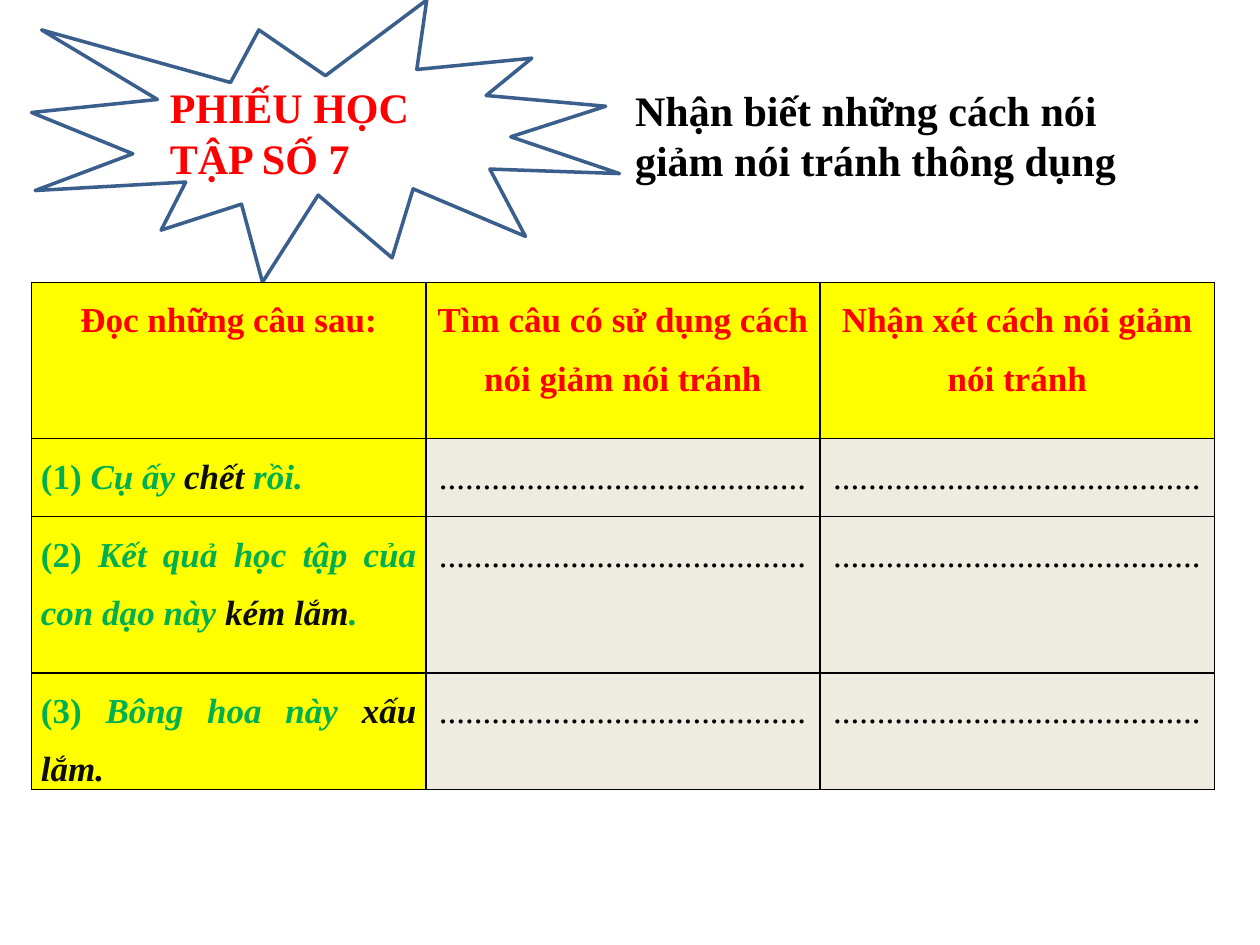
from lxml.etree import SubElement
from pptx import Presentation
from pptx.dml.color import RGBColor
from pptx.enum.shapes import MSO_SHAPE
from pptx.enum.text import MSO_ANCHOR, MSO_AUTO_SIZE, PP_ALIGN
from pptx.oxml.ns import qn
from pptx.util import Pt

WHITE = RGBColor(0xFF, 0xFF, 0xFF)
BLACK = RGBColor(0, 0, 0)
INK = RGBColor(0x0D, 0x0D, 0x0D)
RED = RGBColor(0xFF, 0, 0)
GREEN = RGBColor(0, 0xB0, 0x50)
BLUE = RGBColor(0x3A, 0x5F, 0x8C)
YELLOW = RGBColor(0xFF, 0xFF, 0)
CREAM = RGBColor(0xEE, 0xEC, 0xE1)

DOTS = "." * 42
HEADS = ["Đọc những câu sau:",
         "Tìm câu có sử dụng cách nói giảm nói tránh",
         "Nhận xét cách nói giảm nói tránh"]
# Each sentence: number, opening, stressed words, ending
LINES = [("(1) ", "Cụ ấy ", "chết", " rồi."),
         ("(2) ", "Kết quả học tập của con dạo này ", "kém lắm", "."),
         ("(3) ", "Bông hoa này ", "xấu lắm. ", "")]
ROWS = [89.3, 44.6, 89.3, 44.6]


class Sheet:
    face = "Times New Roman"

    def __init__(self, slide):
        self.slide = slide

    def style(self, para, size, color, bold=True, align=PP_ALIGN.LEFT):
        font = para.font
        font.name, font.size, font.bold = self.face, Pt(size), bold
        font.color.rgb = color
        para.alignment = align

    def title(self, text, box):
        shape = self.slide.shapes.title
        shape.left, shape.top, shape.width, shape.height = map(Pt, box)
        frame = shape.text_frame
        frame.text = text
        frame.word_wrap = True
        frame.auto_size = MSO_AUTO_SIZE.NONE
        frame.vertical_anchor = MSO_ANCHOR.TOP
        self.style(frame.paragraphs[0], 24, BLACK)

    def burst(self, text, box):
        shape = self.slide.shapes.add_shape(
            MSO_SHAPE.EXPLOSION1, *map(Pt, box))
        shape.shadow.inherit = False
        shape.fill.solid()
        shape.fill.fore_color.rgb = WHITE
        shape.line.color.rgb = BLUE
        shape.line.width = Pt(2)
        frame = shape.text_frame
        frame.text = text
        frame.word_wrap = True
        frame.vertical_anchor = MSO_ANCHOR.MIDDLE
        self.style(frame.paragraphs[0], 24, RED)

    def grid(self, box, rows, cols):
        table = self.slide.shapes.add_table(
            len(rows), cols, *map(Pt, box)).table
        for row, high in zip(table.rows, rows):
            row.height = Pt(high)
        for col in table.columns:
            col.width = Pt(box[2] / cols)
        return table

    def cell(self, cell, parts, fill, color, bold=True,
             align=PP_ALIGN.CENTER):
        """Fill a cell; parts are (text, color, italic)."""
        cell.margin_left = cell.margin_right = Pt(5.4)
        cell.margin_top = cell.margin_bottom = 0
        para = cell.text_frame.paragraphs[0]
        para.line_spacing = 1.5
        self.style(para, 20, color, bold, align)
        for text, tint, slant in parts:
            run = para.add_run()
            run.text = text
            run.font.italic = slant
            if tint != color:
                run.font.color.rgb = tint
        # Borders come before the fill in the cell's XML
        props = cell._tc.get_or_add_tcPr()
        for side in ("lnL", "lnR", "lnT", "lnB"):
            line = SubElement(props, qn("a:" + side), w=str(Pt(1)))
            solid = SubElement(line, qn("a:solidFill"))
            SubElement(solid, qn("a:srgbClr"), val=str(BLACK))
        cell.fill.solid()
        cell.fill.fore_color.rgb = fill


def main():
    deck = Presentation()
    deck.slide_width, deck.slide_height = Pt(720), Pt(540)
    sheet = Sheet(deck.slides.add_slide(deck.slide_layouts[5]))

    # Heading
    sheet.burst("PHIẾU HỌC TẬP SỐ 7", (18, 0, 336, 161.3))
    sheet.title("Nhận biết những cách nói giảm nói tránh thông dụng",
                (355.7, 44.6, 323.3, 65.5))

    # Worksheet table
    table = sheet.grid((18, 161.3, 676, sum(ROWS)), ROWS, len(HEADS))
    for col, head in enumerate(HEADS):
        sheet.cell(table.cell(0, col), [(head, RED, False)], YELLOW, RED)
    for row, (mark, start, key, end) in enumerate(LINES, 1):
        parts = [(mark, GREEN, False), (start, GREEN, True),
                 (key, INK, True)]
        if end:
            parts.append((end, GREEN, True))
        sheet.cell(table.cell(row, 0), parts, YELLOW, GREEN,
                   align=PP_ALIGN.JUSTIFY)
        for col in (1, 2):
            sheet.cell(table.cell(row, col), [(DOTS, BLACK, False)],
                       CREAM, BLACK, bold=False)

    deck.save("out.pptx")


if __name__ == "__main__":
    main()
